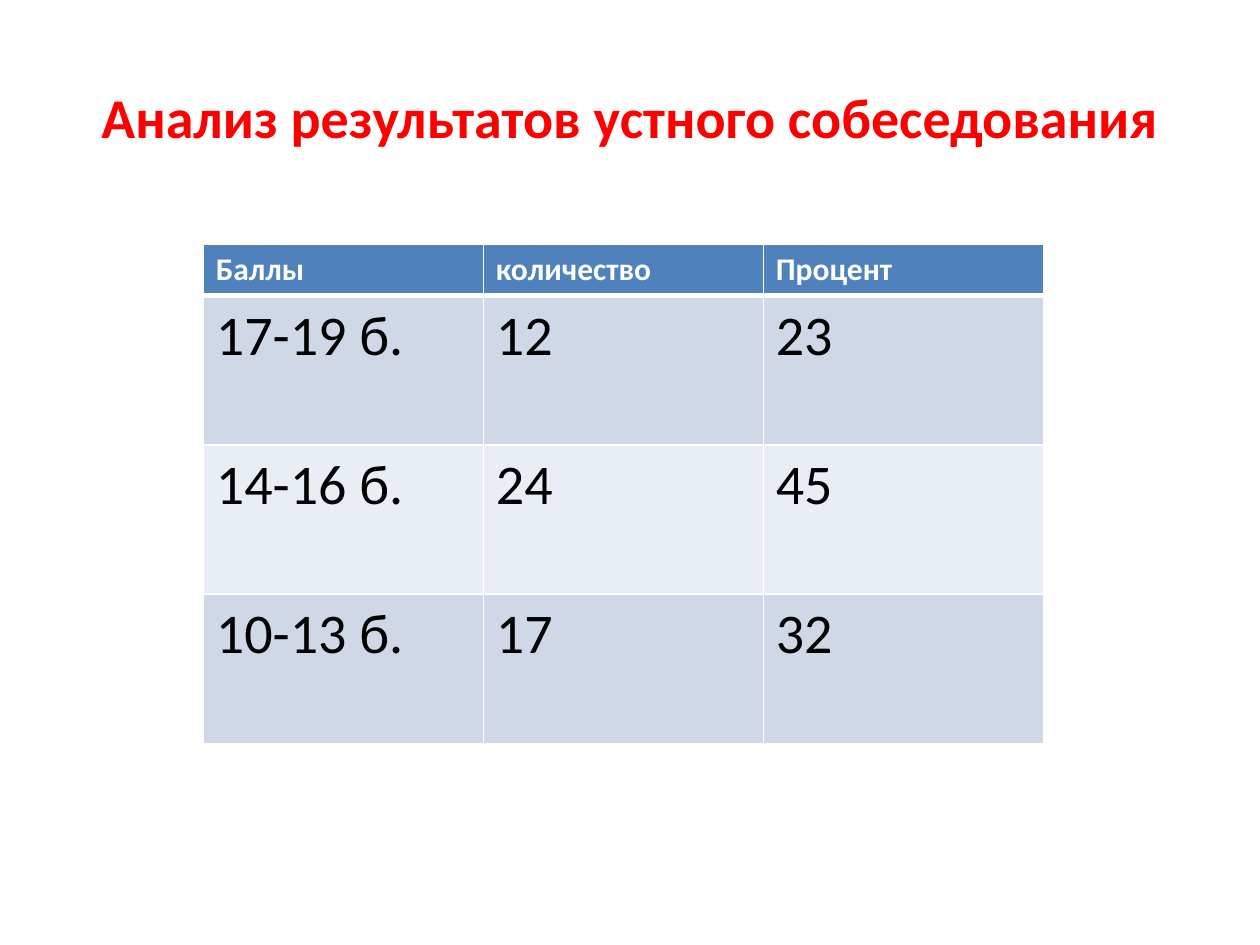
from lxml import etree
from pptx import Presentation
from pptx.dml.color import RGBColor
from pptx.enum.text import MSO_ANCHOR, PP_ALIGN
from pptx.oxml.ns import qn
from pptx.util import Pt

MIDDLE = MSO_ANCHOR.MIDDLE
TOP = MSO_ANCHOR.TOP
CENTER = PP_ALIGN.CENTER
LEFT = PP_ALIGN.LEFT

THEME = {
    "font": "Calibri",
    "title": {"size": 32, "color": "FF0000", "bold": True},
    "head": {"size": 18, "color": "FFFFFF", "bold": True},
    "body": {"size": 32, "color": "000000", "bold": False},
    "fills": ["4F81BD", "D0D8E8", "E9EDF4"],
    "line": "FFFFFF",
}


def write(frame, text, style, align):
    para = frame.paragraphs[0]
    para.alignment = align
    run = para.add_run()
    run.text = text
    look = {"name": THEME["font"], "size": Pt(style["size"]), "bold": style["bold"]}
    for key, value in look.items():
        setattr(run.font, key, value)
    run.font.color.rgb = RGBColor.from_string(style["color"])


def border(cell, widths):
    props = cell._tc.get_or_add_tcPr()
    for spot, (side, width) in enumerate(widths.items()):
        line = etree.Element(qn(f"a:ln{side}"), w=str(Pt(width)))
        fill = etree.SubElement(line, qn("a:solidFill"))
        etree.SubElement(fill, qn("a:srgbClr"), val=THEME["line"])
        props.insert(spot, line)


deck = Presentation()
deck.slide_width, deck.slide_height = Pt(720), Pt(540)
slide = deck.slides.add_slide(deck.slide_layouts[5])

title = slide.shapes.title
place = {"left": Pt(36), "top": Pt(21.6), "width": Pt(648), "height": Pt(90)}
for key, value in place.items():
    setattr(title, key, value)
title.text_frame.vertical_anchor = MIDDLE
write(title.text_frame, THEME["title"]["text"] if "text" in THEME["title"] else "Анализ результатов устного собеседования", THEME["title"], CENTER)

rows = [
    ["Баллы", "количество", "Процент"],
    ["17-19 б.", "12", "23"],
    ["14-16 б.", "24", "45"],
    ["10-13 б.", "17", "32"],
]
heights = [29.2] + [85.3] * 3
table = slide.shapes.add_table(
    len(rows), len(rows[0]), Pt(116.2), Pt(139.7), Pt(480), Pt(sum(heights))
).table
for col in table.columns:
    col.width = Pt(160)

for r, (row, height) in enumerate(zip(rows, heights)):
    table.rows[r].height = Pt(height)
    style = THEME["body" if r else "head"]
    shade = THEME["fills"][2 - r % 2 if r else 0]
    widths = {"L": 1, "R": 1, "T": 3 if r == 1 else 1, "B": 1 if r else 3}
    for c, text in enumerate(row):
        cell = table.cell(r, c)
        cell.vertical_anchor = TOP
        cell.fill.solid()
        cell.fill.fore_color.rgb = RGBColor.from_string(shade)
        border(cell, widths)
        write(cell.text_frame, text, style, LEFT)

deck.save("out.pptx")
